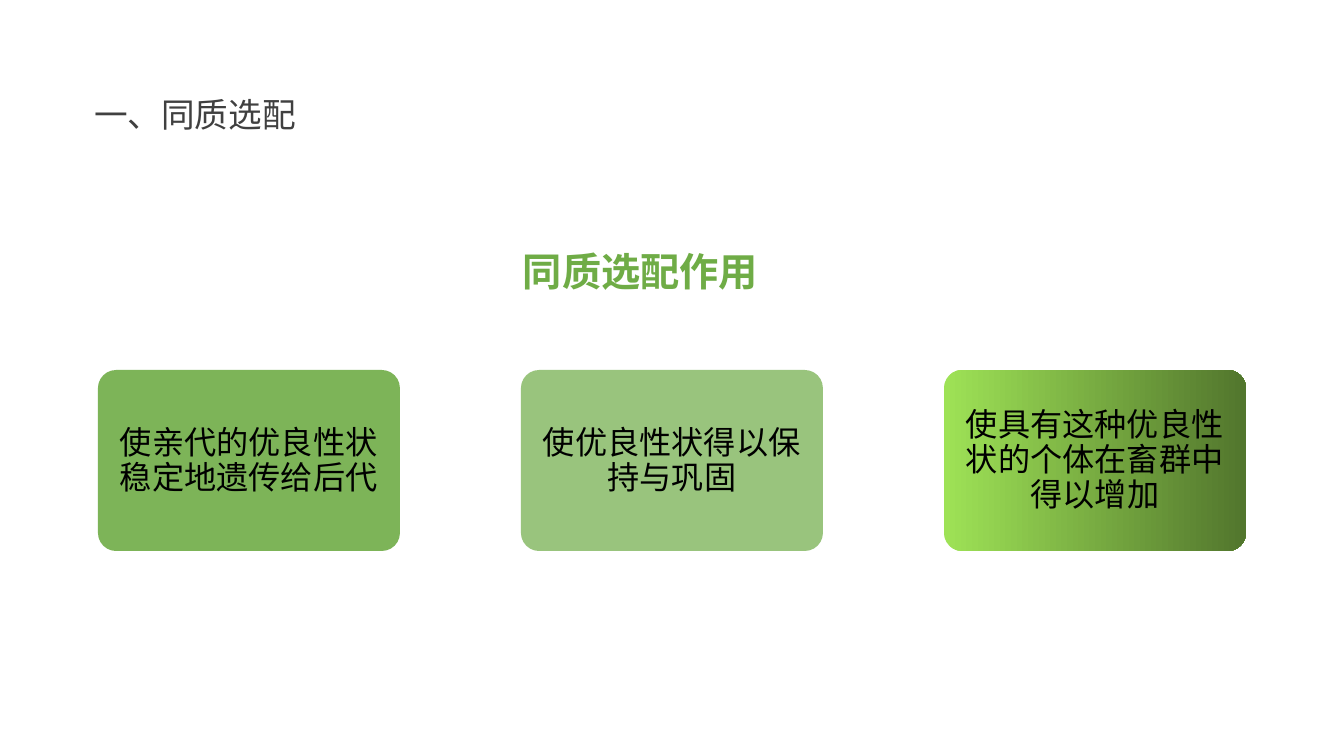
from pptx import Presentation
from pptx.dml.color import RGBColor
from pptx.enum.shapes import MSO_SHAPE
from pptx.enum.text import MSO_ANCHOR, PP_ALIGN
from pptx.oxml.ns import qn
from pptx.util import Pt
from lxml.etree import SubElement

FACE = "Noto Sans CJK SC"
GREEN = RGBColor(0x6F, 0xAC, 0x46)
LIME = RGBColor(0x9E, 0xE2, 0x56)
MOSS = RGBColor(0x52, 0x76, 0x2D)
GRAY = RGBColor(0x40, 0x40, 0x40)
BLACK = RGBColor(0, 0, 0)

HEADS = [
    ("一、同质选配", (94, 41, 1159, 146), {"size": Pt(24), "bold": False}, GRAY),
    ("同质选配作用", (523, 246, 257, 49), {"size": Pt(28), "bold": True}, GREEN),
]
CARDS = [
    ("使亲代的优良性状稳定地遗传给后代", 90),
    ("使优良性状得以保持与巩固", 70),
    ("使具有这种优良性状的个体在畜群中得以增加", None),
]
LEFT, TOP, WIDE, HIGH, STEP = 98, 370, 302, 181, 423
PAD = 14


def px(n):
    return round(n * 914400 / 100.8)


def write(shape, text, style, color, align, side=0):
    frame = shape.text_frame
    form = {
        "word_wrap": True,
        "vertical_anchor": MSO_ANCHOR.MIDDLE,
        "margin_left": px(side),
        "margin_right": px(side),
        "margin_top": 0,
        "margin_bottom": 0,
    }
    for key, val in form.items():
        setattr(frame, key, val)
    para = frame.paragraphs[0]
    para.alignment = align
    run = para.add_run()
    run.text = text
    for key, val in style.items():
        setattr(run.font, key, val)
    run.font.name = FACE
    run.font.color.rgb = color
    SubElement(run._r.get_or_add_rPr(), qn("a:ea"), typeface=FACE)
    return para


def paint(card, alpha):
    fill = card.fill
    if alpha is None:
        fill.gradient()
        fill.gradient_angle = 0
        for stop, color in zip(fill.gradient_stops, (LIME, MOSS)):
            stop.color.rgb = color
    else:
        fill.solid()
        fill.fore_color.rgb = GREEN
        tone = card._element.spPr.find(qn("a:solidFill"))[0]
        SubElement(tone, qn("a:alpha"), val=str(alpha * 1000))


deck = Presentation()
deck.slide_width, deck.slide_height = px(1344), px(756)
slide = deck.slides.add_slide(deck.slide_layouts[6])

for text, box, style, color in HEADS:
    label = slide.shapes.add_textbox(*map(px, box))
    write(label, text, style, color, PP_ALIGN.LEFT)

for i, (text, alpha) in enumerate(CARDS):
    box = (LEFT + i * STEP, TOP, WIDE, HIGH)
    card = slide.shapes.add_shape(MSO_SHAPE.ROUNDED_RECTANGLE, *map(px, box))
    card.adjustments[0] = 0.1
    card.shadow.inherit = False
    card.line.fill.background()
    paint(card, alpha)
    para = write(card, text, {"size": Pt(23)}, BLACK, PP_ALIGN.CENTER, PAD)
    para.line_spacing = Pt(25)

deck.save("out.pptx")
